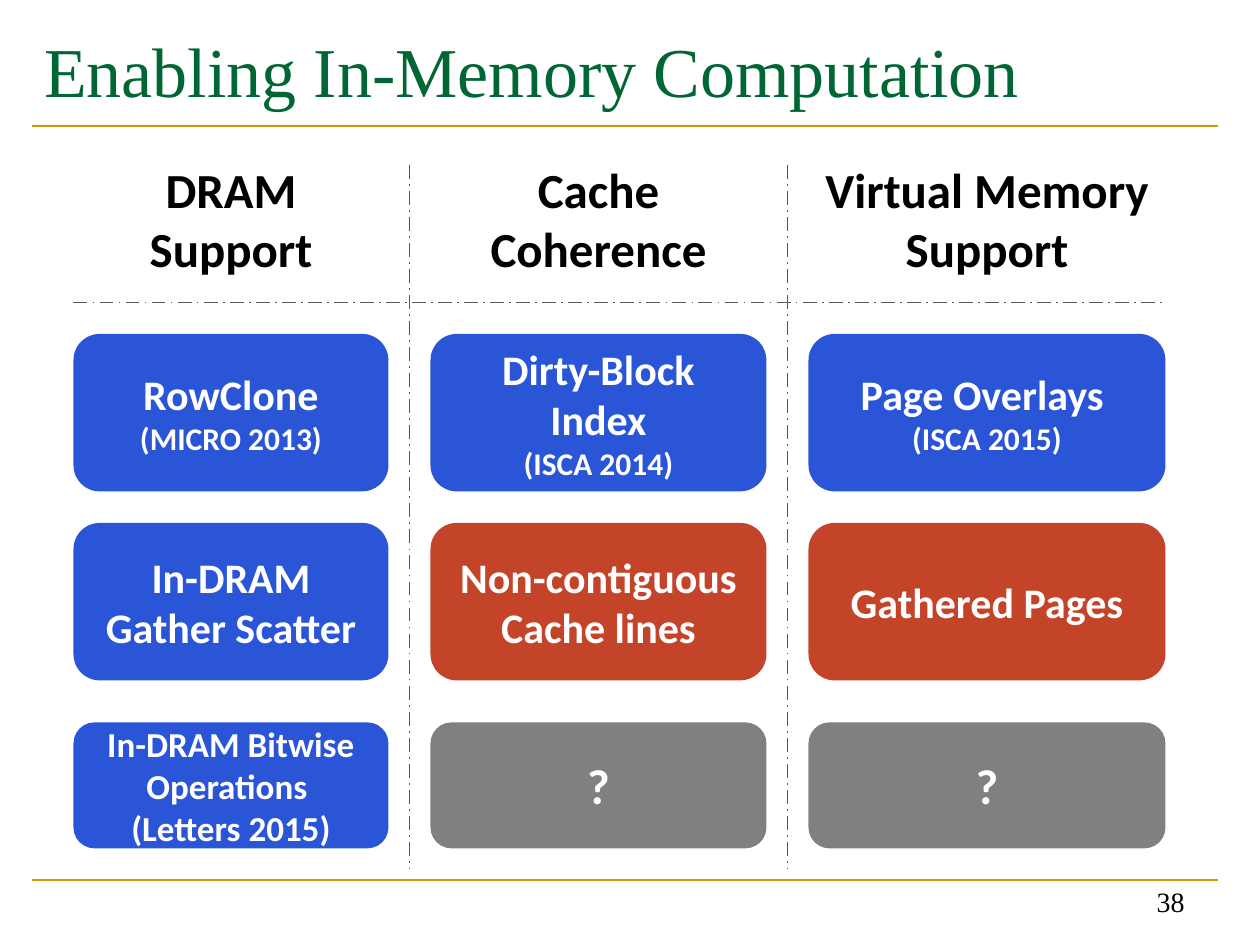
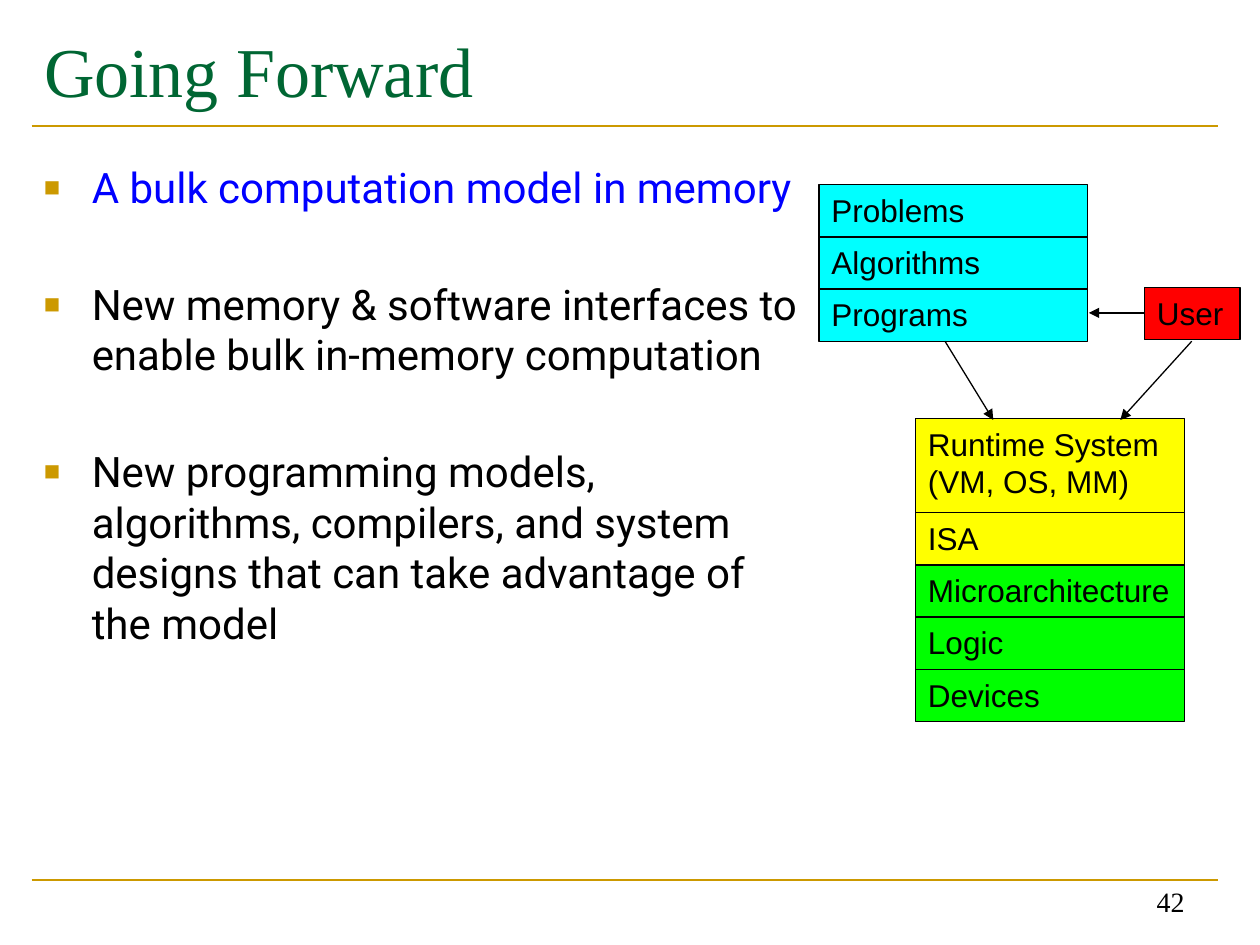
from lxml.etree import SubElement
from pptx import Presentation
from pptx.dml.color import RGBColor
from pptx.enum.dml import MSO_LINE
from pptx.enum.shapes import MSO_CONNECTOR, MSO_SHAPE
from pptx.enum.text import MSO_ANCHOR, MSO_AUTO_SIZE, PP_ALIGN
from pptx.oxml.ns import qn
from pptx.util import Inches, Pt

deck = Presentation()
deck.slide_width = Inches(10)
deck.slide_height = Inches(7.5)
unit = deck.slide_width / 120

hue = RGBColor.from_string
gold, green, black, white = "CC9900", "006633", "000000", "FFFFFF"
blue, rust, gray = "2A55D6", "C4442A", "808080"
cyan, lemon, lime, red = "00FFFF", "FFFF00", "00FF00", "FF0000"
serif = "Times New Roman"


def write(shape, spot, lines, face, ink, bold=False,
          align=PP_ALIGN.LEFT, anchor=MSO_ANCHOR.TOP):
    shape.left, shape.top, shape.width, shape.height = [round(n * unit) for n in spot]
    frame = shape.text_frame
    frame.word_wrap = True
    frame.auto_size = MSO_AUTO_SIZE.NONE
    frame.vertical_anchor = anchor
    frame.text = "\n".join(text for text, size in lines)
    for para, (text, size) in zip(frame.paragraphs, lines):
        para.alignment = align
        for run in para.runs:
            run.font.name = face
            run.font.size = Pt(size)
            run.font.bold = bold
            run.font.color.rgb = hue(ink)
    return frame


def link(page, ends, ink, width, dash=None, arrow=False):
    line = page.shapes.add_connector(MSO_CONNECTOR.STRAIGHT, *[round(n * unit) for n in ends])
    line.line.color.rgb = hue(ink)
    line.line.width = Pt(width)
    if dash:
        line.line.dash_style = dash
    if arrow:
        SubElement(line.line._get_or_add_ln(), qn("a:tailEnd"), type="triangle")
    SubElement(line._element.spPr, qn("a:effectLst"))


pages = []
for title, number in [("Enabling In-Memory Computation", "38"), ("Going Forward", "42")]:
    page = deck.slides.add_slide(deck.slide_layouts[5])
    for y in (12, 83.8):
        link(page, (3, y, 116, y), gold, 1.5)
    write(page.shapes.title, (3, 2, 113, 14), [(title, 40)], serif, green)
    write(page.shapes.add_textbox(0, 0, 0, 0), (86, 82, 28, 6), [(number, 16)], serif, black,
          align=PP_ALIGN.RIGHT, anchor=MSO_ANCHOR.BOTTOM)
    pages.append(page)
matrix, forward = pages

cols = [(7, 30), (41, 32), (77, 34)]
heads = [(7, 30), (41, 32), (75, 38)]
rows = [
    (14.8, 12, heads, [
        (None, [("DRAM Support", 28)]),
        (None, [("Cache Coherence", 28)]),
        (None, [("Virtual Memory Support", 28)])]),
    (31.8, 15, cols, [
        (blue, [("RowClone", 24), ("(MICRO 2013)", 18)]),
        (blue, [("Dirty-Block Index", 24), ("(ISCA 2014)", 18)]),
        (blue, [("Page Overlays ", 24), ("(ISCA 2015)", 18)])]),
    (49.8, 15, cols, [
        (blue, [("In-DRAM Gather Scatter", 24)]),
        (rust, [("Non-contiguous Cache lines", 24)]),
        (rust, [("Gathered Pages", 24)])]),
    (68.8, 12, cols, [
        (blue, [("In-DRAM Bitwise Operations ", 20), ("(Letters 2015)", 20)]),
        (gray, [("?", 28)]),
        (gray, [("?", 28)])]),
]
for y, high, spans, cells in rows:
    for (x, wide), (fill, lines) in zip(spans, cells):
        box = matrix.shapes.add_shape(MSO_SHAPE.ROUNDED_RECTANGLE, 0, 0, 0, 0)
        box.shadow.inherit = False
        box.line.fill.background()
        if fill:
            box.fill.solid()
            box.fill.fore_color.rgb = hue(fill)
        else:
            box.fill.background()
        write(box, (x, y, wide, high), lines, "Calibri", white if fill else black,
              True, PP_ALIGN.CENTER, MSO_ANCHOR.MIDDLE)

for ends in [(39, 15.7, 39, 82.8), (75, 15.7, 75, 82.8), (7, 28.8, 111, 28.8)]:
    link(matrix, ends, "595959", 1, dash=MSO_LINE.LONG_DASH_DOT)

points = [
    "A bulk computation model in memory",
    "New memory & software interfaces to enable bulk in-memory computation",
    "New programming models, algorithms, compilers, and system designs "
    "that can take advantage of the model",
]
body = write(forward.shapes.add_textbox(0, 0, 0, 0), (3, 14.8, 75, 67.2),
             [(text, 24) for text in points], "Roboto", black)
body.paragraphs[0].runs[0].font.color.rgb = hue("0000FF")
for para in body.paragraphs:
    para.space_after = Pt(38)
    props = para._p.get_or_add_pPr()
    props.set("marL", str(Inches(0.38)))
    props.set("indent", str(-Inches(0.38)))
    SubElement(SubElement(props, qn("a:buClr")), qn("a:srgbClr"), val=gold)
    SubElement(props, qn("a:buSzPct"), val="65000")
    SubElement(props, qn("a:buFont"), typeface="Arial")
    SubElement(props, qn("a:buChar"), char="■")

step = 4.97
stacks = [
    (78, 17.6, 25.6, [(cyan, step, ["Problems"]), (cyan, step, ["Algorithms"]),
                      (cyan, step, ["Programs"])]),
    (87.2, 39.84, 25.6, [(lemon, 9, ["Runtime System", "(VM, OS, MM)"]),
                         (lemon, step, ["ISA"]), (lime, step, ["Microarchitecture"]),
                         (lime, step, ["Logic"]), (lime, step, ["Devices"])]),
    (109, 27.4, 9.1, [(red, step, ["User"])]),
]
for x, y, wide, layers in stacks:
    for fill, high, lines in layers:
        box = forward.shapes.add_shape(MSO_SHAPE.RECTANGLE, 0, 0, 0, 0)
        box.shadow.inherit = False
        box.fill.solid()
        box.fill.fore_color.rgb = hue(fill)
        box.line.color.rgb = hue(black)
        box.line.width = Pt(0.75)
        frame = write(box, (x, y, wide, high), [(text, 18) for text in lines], "Arial", black)
        frame.margin_right = 0
        y += high

for ends in [(90, 32.5, 94.6, 40), (109, 29.8, 103.7, 29.8), (113.5, 32.5, 106.7, 40)]:
    link(forward, ends, black, 0.75, arrow=True)

deck.save("out.pptx")
